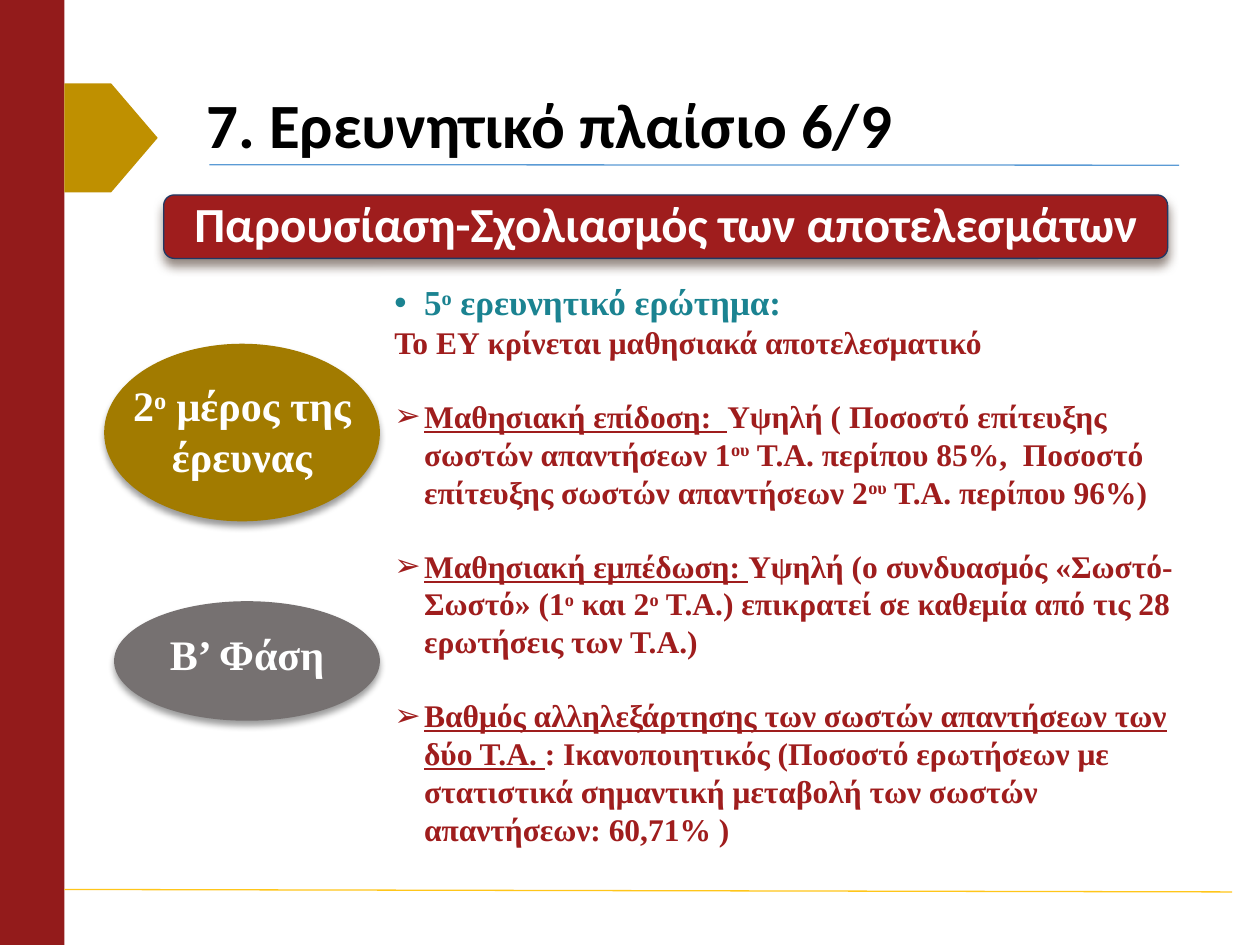
import pptx
import pptx.util
import pptx.dml.color
import pptx.enum.shapes
import pptx.enum.text
import pptx.oxml.ns
from lxml import etree

Cm, Pt = pptx.util.Cm, pptx.util.Pt
SHAPE = pptx.enum.shapes.MSO_SHAPE
ANCHOR = pptx.enum.text.MSO_ANCHOR
ALIGN = pptx.enum.text.PP_ALIGN
qn = pptx.oxml.ns.qn

COLORS = {
    "band": "931B1B", "tab": "BF9000", "title_rule": "5B9BD5", "foot_rule": "FFC61A",
    "part": "A27B00", "phase": "767171", "banner": "9F1D1D", "banner_edge": "203864",
    "banner_shadow": "4E3B30", "question": "1B8391", "finding": "9F1D1D",
    "black": "000000", "white": "FFFFFF",
}
SERIF, SANS = "Times New Roman", "Calibri"
HANG = Cm(0.6)
GAP = Pt(20.7)  # one line of the 18 pt findings

QUESTION = [("5", ""), ("ο", "sup"), (" ερευνητικό ερώτημα:", "")]
ANSWER = [("Το ΕΥ κρίνεται μαθησιακά αποτελεσματικό", "")]
FINDINGS = [
    [("Μαθησιακή επίδοση:  ", "under"),
     ("Υψηλή ( Ποσοστό επίτευξης σωστών απαντήσεων 1", ""), ("ου", "sup"),
     (" Τ.Α. περίπου 85%,  Ποσοστό επίτευξης σωστών απαντήσεων 2", ""), ("ου", "sup"),
     (" Τ.Α. περίπου 96%)", "")],
    [("Μαθησιακή εμπέδωση: ", "under"),
     ("Υψηλή (ο συνδυασμός «Σωστό-Σωστό» (1", ""), ("ο", "sup"), (" και 2", ""),
     ("ο", "sup"), (" Τ.Α.) επικρατεί σε καθεμία από τις 28 ερωτήσεις των Τ.Α.)", "")],
    [("Βαθμός αλληλεξάρτησης των σωστών απαντήσεων των δύο Τ.Α. ", "under"),
     (": Ικανοποιητικός (Ποσοστό ερωτήσεων με στατιστικά σημαντική μεταβολή "
      "των σωστών απαντήσεων: 60,71% )", "")],
]


def rgb(name):
    return pptx.dml.color.RGBColor.from_string(COLORS[name])


def add_runs(paragraph, runs, font, size, color):
    for text, style in runs:
        run = paragraph.add_run()
        run.text = text
        run.font.name, run.font.size, run.font.bold = font, Pt(size), True
        run.font.color.rgb = rgb(color)
        if style == "under":
            run.font.underline = True
        elif style == "sup":
            run._r.get_or_add_rPr().set("baseline", "30000")


def add_bullet(paragraph, char):
    props = paragraph._p.get_or_add_pPr()
    props.set("marL", str(HANG))
    props.set("indent", str(-HANG))
    etree.SubElement(props, qn("a:buFont"), typeface="Arial")
    etree.SubElement(props, qn("a:buChar"), char=char)


def add_block(slide, kind, box, fill):
    block = slide.shapes.add_shape(kind, *map(Cm, box))
    block.shadow.inherit = False
    block.fill.solid()
    block.fill.fore_color.rgb = rgb(fill)
    block.line.fill.background()
    return block


def cast_shadow(shape, color, opacity, blur, distance):
    """Drop a shadow straight down below the shape."""
    effects = shape._element.spPr.find(qn("a:effectLst"))
    shadow = etree.SubElement(effects, qn("a:outerShdw"), blurRad=str(Pt(blur)),
                              dist=str(Pt(distance)), dir="5400000", rotWithShape="0")
    tint = etree.SubElement(shadow, qn("a:srgbClr"), val=COLORS[color])
    etree.SubElement(tint, qn("a:alpha"), val=str(opacity * 1000))


def add_text_frame(slide, box, anchor=ANCHOR.TOP):
    frame = slide.shapes.add_textbox(*map(Cm, box)).text_frame
    frame.word_wrap = True
    frame.vertical_anchor = anchor
    return frame


def add_rule(slide, start, end, color):
    rule = slide.shapes.add_connector(pptx.enum.shapes.MSO_CONNECTOR.STRAIGHT,
                                      *map(Cm, start + end))
    rule.line.color.rgb = rgb(color)
    rule.line.width = Pt(0.75)
    etree.SubElement(rule._element.spPr, qn("a:effectLst"))


def add_frame(slide, width, height):
    """Side band, title tab and the two thin rules."""
    band = 1.3
    add_block(slide, SHAPE.RECTANGLE, (0, 0, band, height), "band")
    add_rule(slide, (4.22, 3.32), (width - 1.63, 3.33), "title_rule")
    add_rule(slide, (band, height - 1.12), (width - 0.56, height - 1.07), "foot_rule")
    add_block(slide, SHAPE.PENTAGON, (band, 1.68, 1.88, 2.2), "tab")


def add_title(slide, box):
    heading = add_text_frame(slide, box, ANCHOR.MIDDLE).paragraphs[0]
    heading.line_spacing = 0.9
    add_runs(heading, [("7. Ερευνητικό πλαίσιο 6/9", "")], SANS, 36, "black")


def add_banner(slide, box):
    banner = add_block(slide, SHAPE.ROUNDED_RECTANGLE, box, "banner")
    banner.line.color.rgb = rgb("banner_edge")
    banner.line.width = Pt(0.75)
    cast_shadow(banner, "banner_shadow", 60, 6, 4)
    frame = banner.text_frame
    frame.word_wrap = True
    frame.vertical_anchor = ANCHOR.MIDDLE
    frame.margin_left = frame.margin_right = Cm(0.2)
    frame.margin_top = frame.margin_bottom = 0
    heading = frame.paragraphs[0]
    heading.alignment = ALIGN.CENTER
    heading.line_spacing = 0.9
    add_runs(heading, [("Παρουσίαση-Σχολιασμός των αποτελεσμάτων", "")], SANS, 28, "white")


def add_oval(slide, box, fill, label, lift):
    """Shadowed ellipse with a label set slightly above its middle."""
    left, top, width, height = box
    oval = add_block(slide, SHAPE.OVAL, box, fill)
    cast_shadow(oval, "black", 40, 4, 3)
    label_width = 5.16
    label_box = (left + (width - label_width) / 2, top - lift, label_width, height)
    caption = add_text_frame(slide, label_box, ANCHOR.MIDDLE).paragraphs[0]
    caption.alignment = ALIGN.CENTER
    add_runs(caption, label, SERIF, 24, "white")


def add_findings(slide, box):
    frame = add_text_frame(slide, box)
    question = frame.paragraphs[0]
    add_bullet(question, "•")
    add_runs(question, QUESTION, SERIF, 20, "question")
    add_runs(frame.add_paragraph(), ANSWER, SERIF, 18, "finding")
    for runs in FINDINGS:
        finding = frame.add_paragraph()
        finding.space_before = GAP
        add_bullet(finding, "➢")
        add_runs(finding, runs, SERIF, 18, "finding")


def main():
    deck = pptx.Presentation()
    width, height = 25.4, 19.05
    deck.slide_width, deck.slide_height = Cm(width), Cm(height)
    slide = deck.slides.add_slide(deck.slide_layouts[6])
    add_frame(slide, width, height)
    add_title(slide, (3.91, 1.52, 20, 2.13))
    add_oval(slide, (2.1, 6.93, 5.56, 3.58), "part",
             [("2", ""), ("ο", "sup"), (" μέρος της έρευνας", "")], 0.05)
    add_oval(slide, (2.3, 12.12, 5.36, 2.41), "phase", [("Β’ Φάση", "")], 0.15)
    add_banner(slide, (3.3, 3.93, 20.24, 1.28))
    add_findings(slide, (7.7, 5.54, 16.79, 13.5))
    deck.save("out.pptx")


if __name__ == "__main__":
    main()
